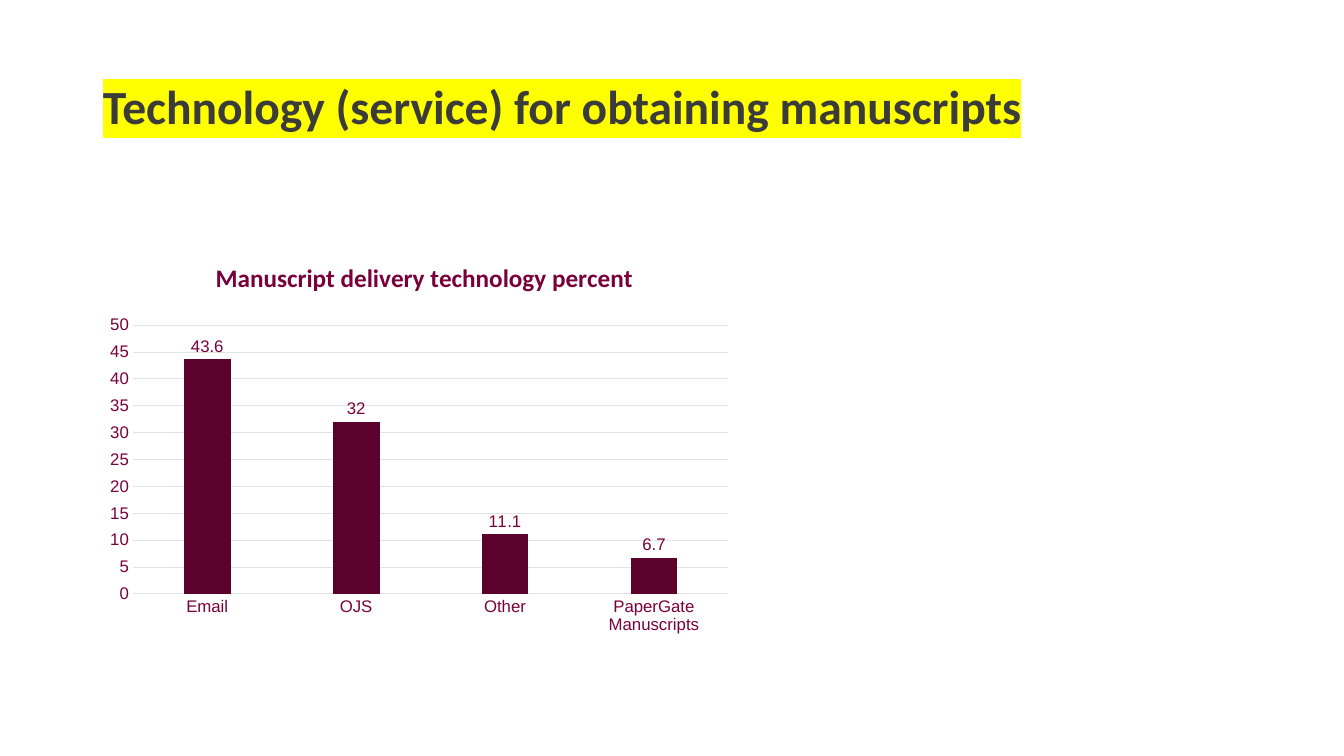
from lxml import etree
from pptx import Presentation
from pptx import util as u
from pptx.chart.data import CategoryChartData
from pptx.dml.color import RGBColor
from pptx.enum import chart as charts, text
from pptx.oxml import ns

WINE = "7A003B"


def style(font, size, color, name="Arial", bold=False):
    font.size, font.bold = u.Pt(size), bold
    font.color.rgb = RGBColor.from_string(color)
    font.name = name


def place(parent, index, **values):
    for old in parent.findall(ns.qn("c:layout")):
        parent.remove(old)
    layout = etree.Element(ns.qn("c:layout"))
    manual = etree.SubElement(layout, ns.qn("c:manualLayout"))
    for tag, value in values.items():
        etree.SubElement(manual, ns.qn("c:" + tag)).set("val", str(value))
    parent.insert(index, layout)


deck = Presentation()
deck.slide_width, deck.slide_height = u.Inches(13.33), u.Inches(7.5)
page = deck.slides.add_slide(deck.slide_layouts[5])

title = page.shapes.title
title.left, title.top, title.width, title.height = [u.Inches(n) for n in (0.92, 0.78, 9.77, 1.45)]
title.text_frame.text = "Technology (service) for obtaining manuscripts"
title.text_frame.vertical_anchor = text.MSO_ANCHOR.TOP
title.text_frame.auto_size = text.MSO_AUTO_SIZE.NONE
para = title.text_frame.paragraphs[0]
para.alignment = text.PP_ALIGN.LEFT
para.line_spacing = 0.9
span = para.runs[0]
style(span.font, 34, "3B3C3A", "Calibri", True)
highlight = etree.Element(ns.qn("a:highlight"))
etree.SubElement(highlight, ns.qn("a:srgbClr")).set("val", "FFFF00")
span.font._element.find(ns.qn("a:solidFill")).addnext(highlight)

data = CategoryChartData()
data.categories = ["Email", "OJS", "Other", "PaperGate Manuscripts"]
data.add_series("Series 1", [43.6, 32, 11.1, 6.7])
frame = page.shapes.add_chart(
    charts.XL_CHART_TYPE.COLUMN_CLUSTERED,
    *[u.Inches(n) for n in (0.92, 2.36, 6.52, 4.33)], data)
chart = frame.chart
style(chart.font, 10, WINE)
chart.has_legend = False

chart.has_title = True
heading = chart.chart_title
heading.text_frame.text = "Manuscript delivery technology percent"
style(heading.text_frame.paragraphs[0].runs[0].font, 18, WINE, "Calibri", True)
place(heading._element, 1, xMode="edge", yMode="edge", x=0.18, y=0.04)
place(chart._chartSpace.chart.plotArea, 0, layoutTarget="inner",
      xMode="edge", yMode="edge", x=0.061, y=0.2, w=0.906, h=0.616)

for axis in (chart.category_axis, chart.value_axis):
    axis.major_tick_mark = axis.minor_tick_mark = charts.XL_TICK_MARK.NONE
    axis.format.line.fill.background()
    style(axis.tick_labels.font, 12, WINE)
scale = chart.value_axis
scale.minimum_scale, scale.maximum_scale, scale.major_unit = 0, 50, 5
scale.has_major_gridlines = True
scale.major_gridlines.format.line.color.rgb = RGBColor.from_string("E2E3E2")
scale.major_gridlines.format.line.width = u.Pt(0.5)

plot = chart.plots[0]
plot.gap_width, plot.overlap = 219, -27
plot.vary_by_categories = False
bars = plot.series[0]
bars.format.fill.solid()
bars.format.fill.fore_color.rgb = RGBColor.from_string("5C002C")
labels = bars.data_labels
labels.show_value = True
labels.position = charts.XL_LABEL_POSITION.OUTSIDE_END
style(labels.font, 12, WINE)

deck.save("out.pptx")
